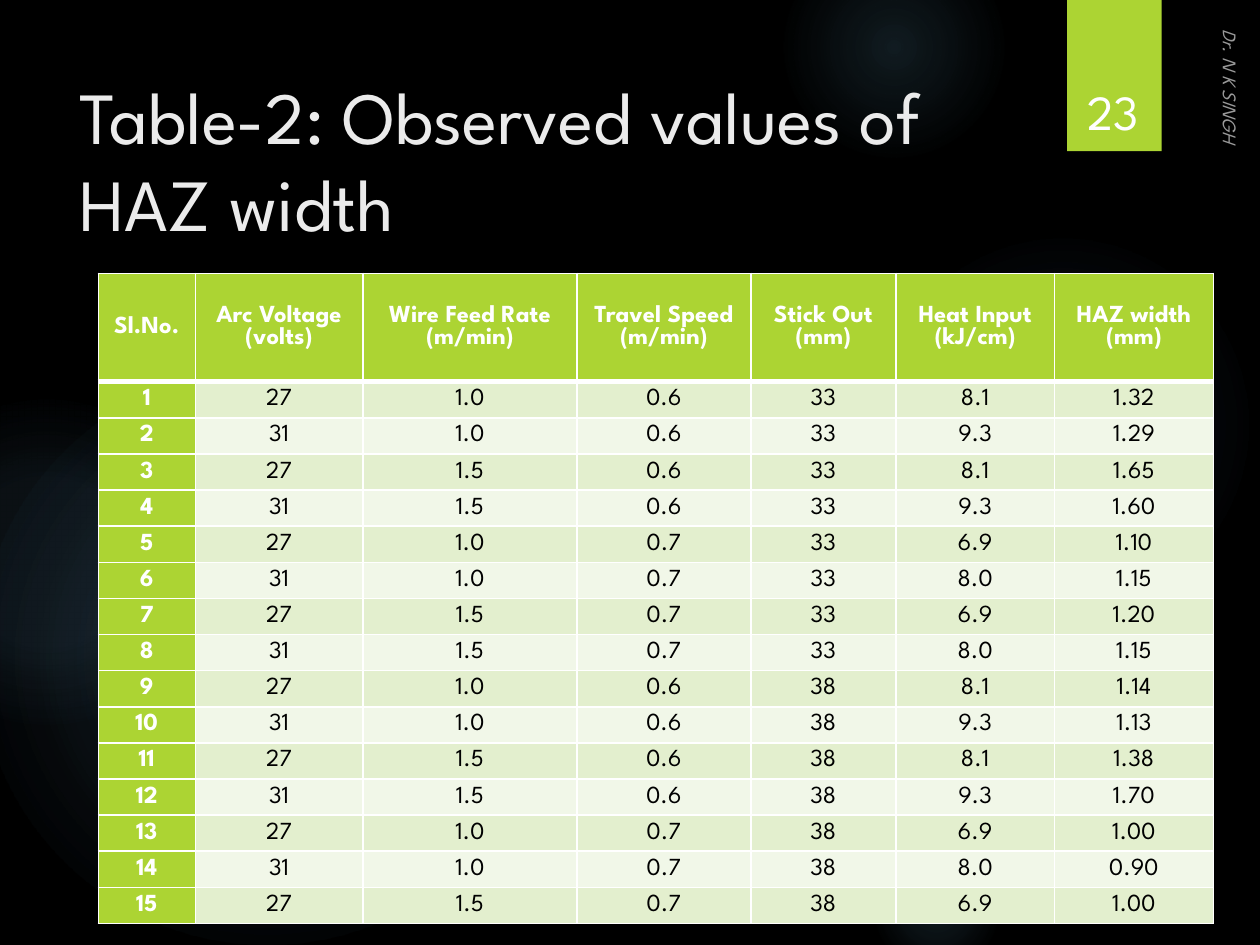
import pptx
import pptx.dml.color
import pptx.enum.shapes
import pptx.enum.text
import pptx.oxml
import pptx.oxml.ns
import pptx.util

COLORS = {
    "black": "000000",
    "white": "FFFFFF",
    "title": "EBEBEB",
    "lime": "ACD433",
    "odd": "E3EFCE",
    "even": "F1F7E8",
    "glow": "7AC4F0",
}
FONT = "League Spartan"
NAMESPACE = pptx.oxml.ns.nsdecls("a")
ANCHOR = pptx.enum.text.MSO_ANCHOR
ALIGN = pptx.enum.text.PP_ALIGN
SHAPE = pptx.enum.shapes.MSO_SHAPE

deck = pptx.Presentation()
deck.slide_width = pptx.util.Inches(10)
deck.slide_height = pptx.util.Inches(7.5)
column = deck.slide_width / 100
row = deck.slide_height / 75

page = deck.slides.add_slide(deck.slide_layouts[5])
page.background.fill.solid()
page.background.fill.fore_color.rgb = pptx.dml.color.RGBColor.from_string(COLORS["black"])


def place(left, top, width, height):
    return int(left * column), int(top * row), int(width * column), int(height * row)


def write(frame, text, size, color, align, anchor, bold=False, italic=False, spacing=None):
    frame.text = text
    frame.word_wrap = True
    frame.vertical_anchor = anchor
    for para in frame.paragraphs:
        para.alignment = align
        para.line_spacing = spacing
        for span in para.runs:
            span.font.name = FONT
            span.font.size = pptx.util.Pt(size)
            span.font.bold = bold
            span.font.italic = italic
            span.font.color.rgb = pptx.dml.color.RGBColor.from_string(COLORS[color])


glows = [
    (68.9, 18.3, 30.8, [(0, 7), (36, 6), (69, 0)]),
    (62.2, -5, 17.5, [(0, 14), (36, 7), (73, 0)]),
    (68.9, 66.7, 10.8, [(0, 14), (36, 7), (66, 0)]),
    (-1.7, 29.2, 45.8, [(0, 11), (36, 10), (75, 0)]),
    (-9.2, 31.7, 25.8, [(0, 8), (36, 8), (72, 0)]),
]
for left, top, size, stops in glows:
    glow = page.shapes.add_shape(SHAPE.OVAL, *place(left, top, size, size))
    glow.shadow.inherit = False
    glow.line.fill.background()
    stop_xml = "".join(
        f'<a:gs pos="{position * 1000}"><a:srgbClr val="{COLORS["glow"]}">'
        f'<a:alpha val="{alpha * 1000}"/></a:srgbClr></a:gs>'
        for position, alpha in stops
    )
    gradient = pptx.oxml.parse_xml(
        f'<a:gradFill {NAMESPACE}><a:gsLst>{stop_xml}</a:gsLst><a:path path="circle">'
        '<a:fillToRect l="50000" t="50000" r="50000" b="50000"/></a:path></a:gradFill>'
    )
    glow.element.spPr.find(pptx.oxml.ns.qn("a:prstGeom")).addnext(gradient)

tab = page.shapes.add_shape(SHAPE.RECTANGLE, *place(84.7, 0, 7.5, 12))
tab.shadow.inherit = False
tab.fill.solid()
tab.fill.fore_color.rgb = pptx.dml.color.RGBColor.from_string(COLORS["lime"])
tab.line.fill.background()

title = page.shapes.title
title.left, title.top, title.width, title.height = place(5.3, 5, 77.2, 15.3)
write(title.text_frame, "Table-2: Observed values of HAZ width", 42, "title",
      ALIGN.LEFT, ANCHOR.MIDDLE, spacing=pptx.util.Pt(49.7))
title.text_frame.auto_size = pptx.enum.text.MSO_AUTO_SIZE.NONE
page.shapes.element.append(title.element)

headings = ["Sl.No.", "Arc Voltage\n(volts)", "Wire Feed Rate\n(m/min)", "Travel Speed\n(m/min)",
            "Stick Out\n(mm)", "Heat Input\n(kJ/cm)", "HAZ width\n(mm)"]
haz_widths = ["1.32", "1.29", "1.65", "1.60", "1.10", "1.15", "1.20", "1.15",
              "1.14", "1.13", "1.38", "1.70", "1.00", "0.90", "1.00"]
heat_inputs = {("27", "0.6"): "8.1", ("31", "0.6"): "9.3", ("27", "0.7"): "6.9", ("31", "0.7"): "8.0"}
records = [headings]
for index, haz_width in enumerate(haz_widths):
    voltage = ["27", "31"][index % 2]
    feed = ["1.0", "1.5"][index // 2 % 2]
    speed = ["0.6", "0.7"][index // 4 % 2]
    stick_out = ["33", "38"][index // 8]
    records.append([str(index + 1), voltage, feed, speed, stick_out,
                    heat_inputs[voltage, speed], haz_width])

table = page.shapes.add_table(len(records), len(headings), *place(7.8, 21.7, 88.5, 51.6)).table
table.first_col = True
for table_column, width in zip(table.columns, [7.7, 13.3, 17, 13.8, 11.5, 12.6, 12.6]):
    table_column.width = int(width * column)
for number, table_row in enumerate(table.rows):
    table_row.height = int((8.6 if number == 0 else 43 / len(haz_widths)) * row)

for number, record in enumerate(records):
    for position, text in enumerate(record):
        cell = table.cell(number, position)
        accent = number == 0 or position == 0
        cell.margin_left = cell.margin_right = int(0.7 * column)
        cell.margin_top = cell.margin_bottom = 0
        write(cell.text_frame, text, 14, "white" if accent else "black", ALIGN.CENTER,
              ANCHOR.MIDDLE, bold=accent, spacing=pptx.util.Pt(13))
        cell.vertical_anchor = ANCHOR.MIDDLE
        properties = cell._tc.get_or_add_tcPr()
        for side in ["lnL", "lnR", "lnT", "lnB"]:
            heavy = (number == 0 and side == "lnB") or (number == 1 and side == "lnT")
            properties.append(pptx.oxml.parse_xml(
                f'<a:{side} {NAMESPACE} w="{pptx.util.Pt(3 if heavy else 1)}"><a:solidFill>'
                f'<a:srgbClr val="{COLORS["white"]}"/></a:solidFill></a:{side}>'
            ))
        fill = "lime" if accent else ["even", "odd"][number % 2]
        cell.fill.solid()
        cell.fill.fore_color.rgb = pptx.dml.color.RGBColor.from_string(COLORS[fill])

author = page.shapes.add_textbox(*place(76.4, 21.2, 42.2, 2.5))
author.rotation = 90
write(author.text_frame, "Dr. N K SINGH", 11, "white", ALIGN.LEFT, ANCHOR.BOTTOM, italic=True)
for color in author.element.iter(pptx.oxml.ns.qn("a:srgbClr")):
    color.append(pptx.oxml.parse_xml(f'<a:alpha {NAMESPACE} val="60000"/>'))

page_number = page.shapes.add_textbox(*place(84.9, 3.2, 6.9, 8.4))
write(page_number.text_frame, "23", 28, "white", ALIGN.CENTER, ANCHOR.BOTTOM)

deck.save("out.pptx")
